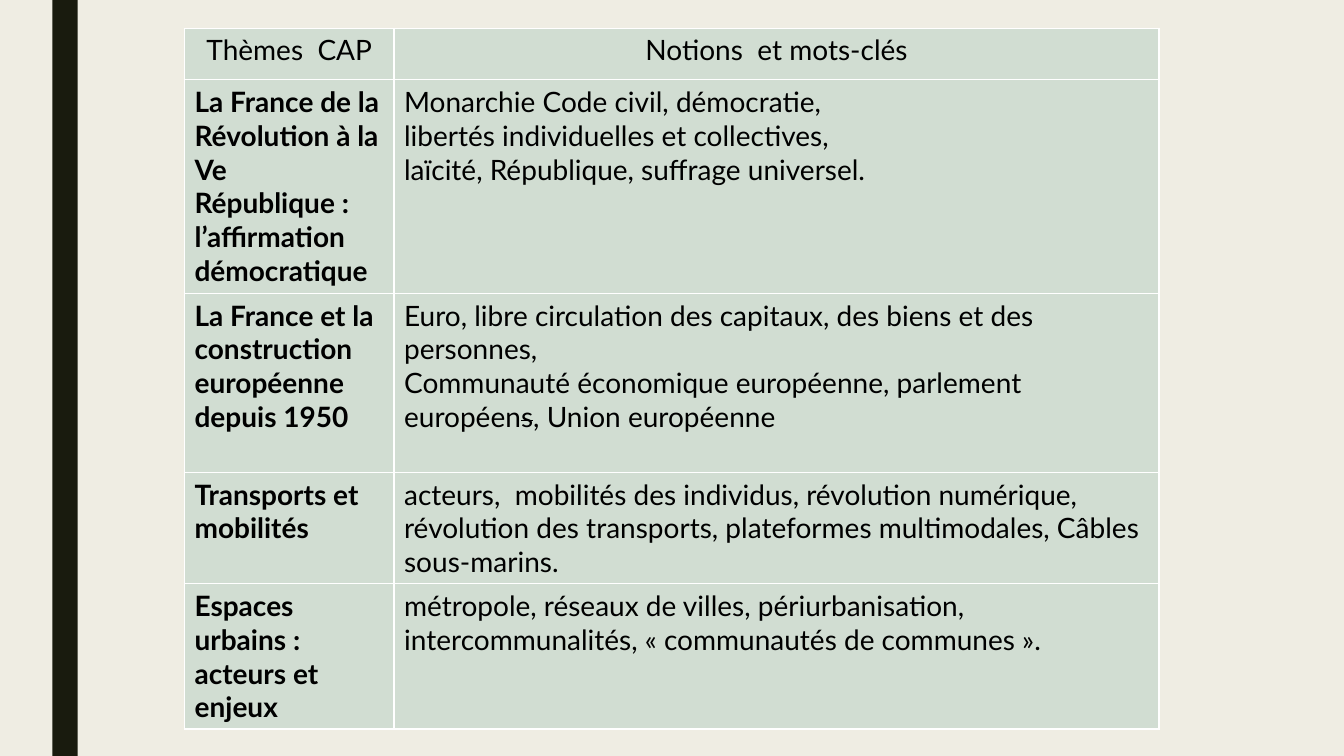
from lxml import etree
from pptx import Presentation
from pptx import util as u
from pptx.dml.color import RGBColor
from pptx.enum import shapes, text
from pptx.oxml import ns

BACKGROUND = RGBColor(0xEF, 0xED, 0xE3)
BAND = RGBColor(0x19, 0x1B, 0x0E)
CELL = RGBColor(0xD1, 0xDD, 0xD2)
BORDER = RGBColor(0xFF, 0xFF, 0xFF)
INK = RGBColor(0x00, 0x00, 0x00)

HEADINGS = ["Thèmes  CAP", "Notions  et mots-clés"]
STRUCK = "~"
THEMES = [
    ("La France de la Révolution à la Ve République : l’affirmation démocratique",
     ["Monarchie Code civil, démocratie,",
      "libertés individuelles et collectives,",
      "laïcité, République, suffrage universel."]),
    ("La France et la construction européenne depuis 1950",
     ["Euro, libre circulation des capitaux, des biens et des personnes,",
      "Communauté économique européenne, parlement européen~s~, Union européenne"]),
    ("Transports et mobilités",
     ["acteurs,  mobilités des individus, révolution numérique, révolution des transports, "
      "plateformes multimodales, Câbles sous-marins."]),
    ("Espaces urbains : acteurs et enjeux",
     ["métropole, réseaux de villes, périurbanisation, intercommunalités, "
      "« communautés de communes »."]),
]
COLUMN_WIDTHS = [5.28, 19.28]
ROW_HEIGHTS = [1.3, 5.38, 4.51, 2.8, 3.66]


class SlideBuilder:
    """Draws styled elements on the current slide."""

    font_name = "Lato"
    font_size = u.Pt(20)
    border_width = u.Pt(1)

    def __init__(self, presentation):
        self.slide = presentation.slides.add_slide(presentation.slide_layouts[6])
        fill = self.slide.background.fill
        fill.solid()
        fill.fore_color.rgb = BACKGROUND

    def band(self, left, top, width, height):
        shape = self.slide.shapes.add_shape(
            shapes.MSO_SHAPE.RECTANGLE, u.Cm(left), u.Cm(top), u.Cm(width), u.Cm(height))
        shape.shadow.inherit = False
        shape.fill.solid()
        shape.fill.fore_color.rgb = BAND
        shape.line.fill.background()

    def table(self, left, top, widths, heights):
        table = self.slide.shapes.add_table(
            len(heights), len(widths), u.Cm(left), u.Cm(top),
            u.Cm(sum(widths)), u.Cm(sum(heights))).table
        table.horz_banding = False
        for column, width in zip(table.columns, widths):
            column.width = u.Cm(width)
        for row, height in zip(table.rows, heights):
            row.height = u.Cm(height)
        return table

    def cell(self, cell, lines, bold=False, alignment=text.PP_ALIGN.LEFT):
        cell.fill.solid()
        cell.fill.fore_color.rgb = CELL
        self.borders(cell)
        for index, line in enumerate(lines):
            frame = cell.text_frame
            paragraph = frame.add_paragraph() if index else frame.paragraphs[0]
            paragraph.alignment = alignment
            font = paragraph.font
            font.name, font.size, font.bold = self.font_name, self.font_size, bold
            font.color.rgb = INK
            for position, part in enumerate(line.split(STRUCK)):
                run = paragraph.add_run()
                run.text = part
                if position % 2:
                    run._r.get_or_add_rPr().set("strike", "sngStrike")

    def borders(self, cell):
        properties = cell._tc.get_or_add_tcPr()
        for index, side in enumerate("LRTB"):
            line = etree.Element(ns.qn(f"a:ln{side}"), w=str(self.border_width))
            fill = etree.SubElement(line, ns.qn("a:solidFill"))
            etree.SubElement(fill, ns.qn("a:srgbClr"), val=str(BORDER))
            properties.insert(index, line)


def main():
    presentation = Presentation()
    presentation.slide_width = u.Cm(33.87)
    presentation.slide_height = u.Cm(19.05)
    builder = SlideBuilder(presentation)
    builder.band(1.32, 0, 0.64, 19.05)
    table = builder.table(4.65, 0.71, COLUMN_WIDTHS, ROW_HEIGHTS)
    for column, heading in enumerate(HEADINGS):
        builder.cell(table.cell(0, column), [heading], alignment=text.PP_ALIGN.CENTER)
    for row, (theme, notions) in enumerate(THEMES, start=1):
        builder.cell(table.cell(row, 0), [theme], bold=True)
        builder.cell(table.cell(row, 1), notions)
    presentation.save("out.pptx")


if __name__ == "__main__":
    main()
